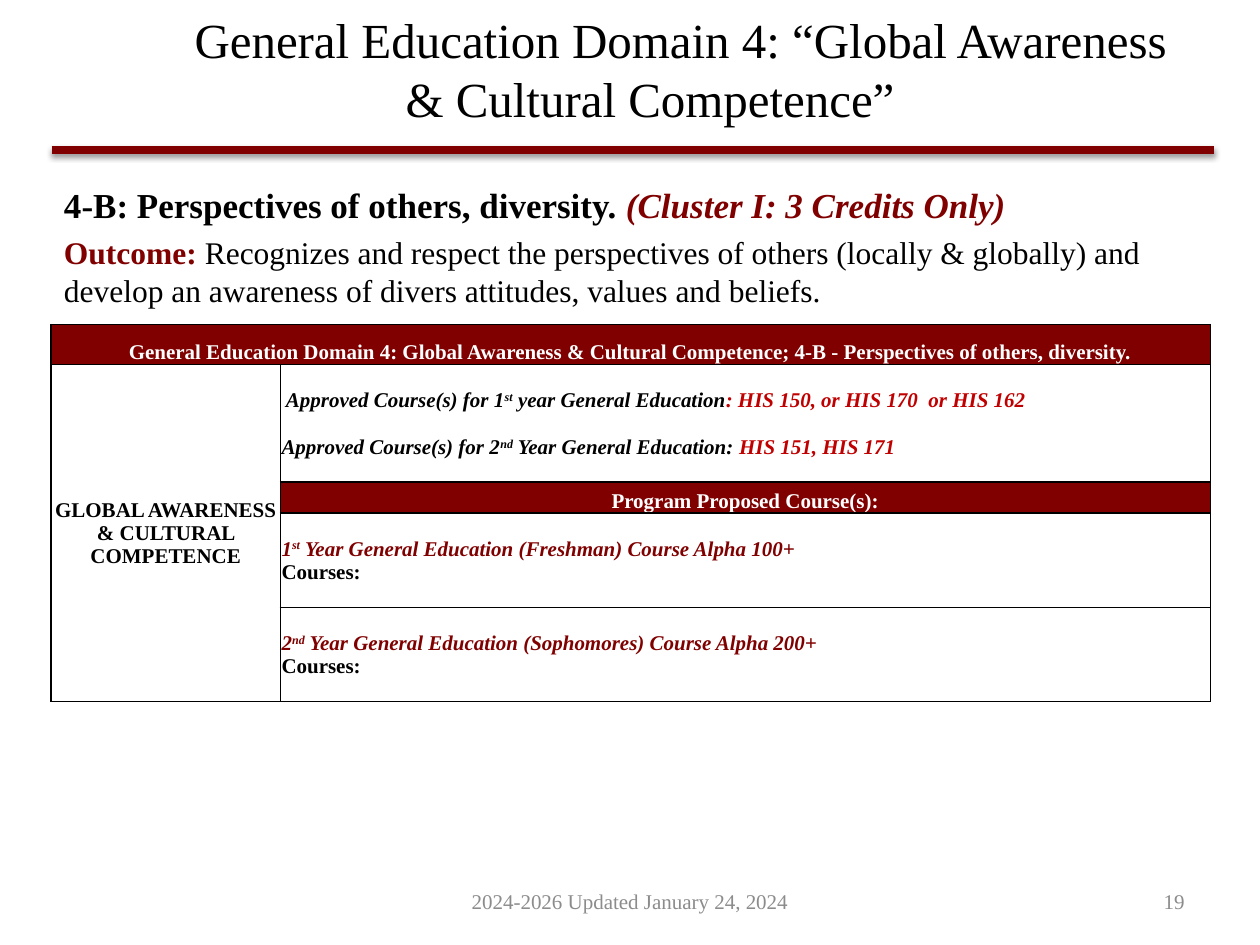
import pptx
import pptx.dml.color
import pptx.enum.shapes
import pptx.enum.text
import pptx.oxml
import pptx.oxml.ns
import pptx.util

Pt = pptx.util.Pt
ALIGN = pptx.enum.text.PP_ALIGN
ANCHOR = pptx.enum.text.MSO_ANCHOR
COLORS = {"black": "000000", "maroon": "800000", "red": "C00000",
          "white": "FFFFFF", "gray": "8C8C8C"}
NS = pptx.oxml.ns.nsdecls("a")


class SlideBuilder:
    font_name = "Times New Roman"

    def __init__(self, slide):
        self.slide = slide

    def style(self, font, size=None, color=None, bold=None, italic=None):
        if size:
            font.name = self.font_name
            font.size = Pt(size)
        if color:
            font.color.rgb = pptx.dml.color.RGBColor.from_string(COLORS[color])
        if bold is not None:
            font.bold = bold
        if italic is not None:
            font.italic = italic

    def set_lines(self, frame, lines, size=12, color="black", bold=False,
                  italic=False, align=ALIGN.LEFT, gap=0):
        """Each line is a list of (text, overrides); "raised" makes a superscript."""
        frame.word_wrap = True
        for i, pieces in enumerate(lines):
            paragraph = frame.add_paragraph() if i else frame.paragraphs[0]
            paragraph.alignment = align
            paragraph.space_before = Pt(gap if i else 0)
            self.style(paragraph.font, size, color, bold, italic)
            for text, overrides in pieces:
                run = paragraph.add_run()
                run.text = text
                changes = dict(overrides)
                if changes.pop("raised", False):
                    run._r.get_or_add_rPr().set("baseline", "30000")
                self.style(run.font, **changes)

    def title(self, text, left, top, width, height, first_indent):
        title = self.slide.shapes.title
        title.left, title.top, title.width, title.height = map(
            Pt, (left, top, width, height))
        title.text_frame.auto_size = pptx.enum.text.MSO_AUTO_SIZE.NONE
        title.text_frame.vertical_anchor = ANCHOR.MIDDLE
        self.set_lines(title.text_frame, [[(text, {})]], size=28, align=ALIGN.CENTER)
        properties = title.text_frame.paragraphs[0]._p.get_or_add_pPr()
        properties.set("marL", "0")
        properties.set("indent", str(Pt(first_indent)))

    def text(self, lines, left, top, width, height, anchor=ANCHOR.MIDDLE, **style):
        box = self.slide.shapes.add_textbox(*map(Pt, (left, top, width, height)))
        box.text_frame.vertical_anchor = anchor
        self.set_lines(box.text_frame, lines, **style)

    def rule(self, left, right, y):
        """Draw a thick horizontal line with a soft shadow below it."""
        line = self.slide.shapes.add_connector(
            pptx.enum.shapes.MSO_CONNECTOR.STRAIGHT, *map(Pt, (left, y, right, y)))
        line.line.width = Pt(4.5)
        line.line.color.rgb = pptx.dml.color.RGBColor.from_string(COLORS["maroon"])
        line._element.spPr.append(pptx.oxml.parse_xml(
            f'<a:effectLst {NS}><a:outerShdw blurRad="{Pt(3.1)}" dist="{Pt(1.6)}" '
            f'dir="5400000" rotWithShape="0"><a:srgbClr val="{COLORS["black"]}">'
            '<a:alpha val="38000"/></a:srgbClr></a:outerShdw></a:effectLst>'))

    def table(self, left, top, columns, rows):
        frame = self.slide.shapes.add_table(
            len(rows), len(columns), *map(Pt, (left, top, sum(columns), sum(rows))))
        table = frame.table
        table.first_row = table.horz_banding = False
        for column, width in zip(table.columns, columns):
            column.width = Pt(width)
        for row, height in zip(table.rows, rows):
            row.height = Pt(height)
        for cell in table.iter_cells():
            cell.margin_left = cell.margin_right = cell.margin_top = Pt(0.7)
            cell.margin_bottom = 0
            for side in "LRTB":
                cell._tc.get_or_add_tcPr().append(pptx.oxml.parse_xml(
                    f'<a:ln{side} {NS} w="{Pt(1)}"><a:solidFill><a:srgbClr '
                    f'val="{COLORS["black"]}"/></a:solidFill></a:ln{side}>'))
            cell.fill.background()
        return table

    def cell(self, cell, lines, fill=None, anchor=ANCHOR.MIDDLE, **style):
        if fill:
            cell.fill.solid()
            cell.fill.fore_color.rgb = pptx.dml.color.RGBColor.from_string(COLORS[fill])
        cell.vertical_anchor = anchor
        self.set_lines(cell.text_frame, lines, bold=True, **style)


def main():
    deck = pptx.Presentation()
    deck.slide_width, deck.slide_height = Pt(720), Pt(540)
    page = SlideBuilder(deck.slides.add_slide(deck.slide_layouts[5]))
    raised, red, maroon = {"raised": True}, {"color": "red"}, {"color": "maroon"}

    page.title("General Education Domain 4: “Global Awareness & Cultural Competence”",
               59, 4.5, 625, 69, first_indent=35)
    page.rule(29.5, 694, 85.7)
    page.text([
        [("4-B: Perspectives of others, diversity. ", {"bold": True}),
         ("(Cluster I: 3 Credits Only)", {**maroon, "bold": True, "italic": True})],
        [("Outcome: ", {**maroon, "size": 18, "bold": True}),
         ("Recognizes and respect the perspectives of others (locally & globally) and "
          "develop an awareness of divers attitudes, values and beliefs.", {"size": 18})],
    ], 29.5, 101.5, 662.4, 61, size=20, anchor=ANCHOR.TOP, gap=4)

    courses = page.table(29.2, 185.5, [131, 531.4], [22.7, 67.4, 17.7, 53.8, 53.8])
    courses.cell(0, 0).merge(courses.cell(0, 1))
    courses.cell(1, 0).merge(courses.cell(4, 0))
    banner = {"fill": "maroon", "color": "white", "align": ALIGN.CENTER,
              "anchor": ANCHOR.BOTTOM}
    page.cell(courses.cell(0, 0), [[(
        "General Education Domain 4: Global Awareness & Cultural Competence; "
        "4-B - Perspectives of others, diversity.", {})]], **banner)
    page.cell(courses.cell(1, 0), [[("GLOBAL AWARENESS & CULTURAL COMPETENCE", {})]],
              align=ALIGN.CENTER)
    page.cell(courses.cell(1, 1), [
        [(" Approved Course(s) for 1", {}), ("st", raised),
         (" year General Education", {}), (": HIS 150, or HIS 170  or HIS 162", red)],
        [("Approved Course(s) for 2", {}), ("nd", raised),
         (" Year General Education: ", {}), ("HIS 151, HIS 171", red)],
    ], italic=True, gap=13.5)
    page.cell(courses.cell(2, 1), [[("Program Proposed Course(s):", {})]], **banner)
    years = [("1", "st", "Freshman", 100), ("2", "nd", "Sophomores", 200)]
    heading = {**maroon, "italic": True}
    for row, (number, suffix, group, level) in enumerate(years, start=3):
        page.cell(courses.cell(row, 1), [
            [(number, heading), (suffix, {**heading, **raised}),
             (f" Year General Education ({group}) Course Alpha {level}+", heading)],
            [("Courses:", {})],
        ])

    page.text([[("2024-2026 Updated January 24, 2024", {})]],
              246, 500.5, 228, 28.8, color="gray", align=ALIGN.CENTER)
    page.text([[("19", {})]], 516, 500.5, 168, 28.8, color="gray", align=ALIGN.RIGHT)
    deck.save("out.pptx")


if __name__ == "__main__":
    main()
